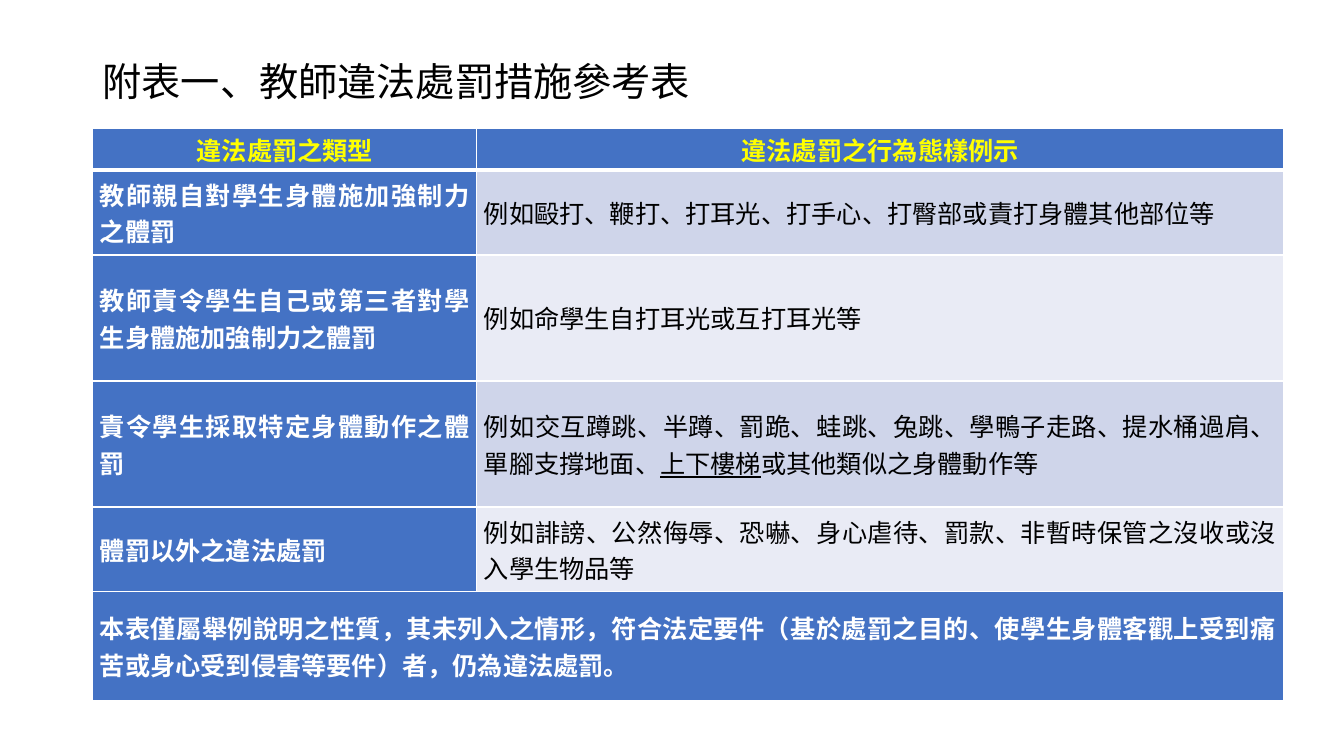
from lxml.etree import SubElement
from pptx import Presentation
from pptx.dml.color import RGBColor
from pptx.enum.text import MSO_ANCHOR as Anchor, PP_ALIGN as Align
from pptx.oxml.ns import qn
from pptx.util import Inches, Pt

TITLE = "附表一、教師違法處罰措施參考表"
HEADINGS = ["違法處罰之類型", "違法處罰之行為態樣例示"]
PUNISHMENTS = [
    ("教師親自對學生身體施加強制力之體罰",
     ["例如毆打、鞭打、打耳光、打手心、打臀部或責打身體其他部位等"]),
    ("教師責令學生自己或第三者對學生身體施加強制力之體罰",
     ["例如命學生自打耳光或互打耳光等"]),
    ("責令學生採取特定身體動作之體罰",
     ["例如交互蹲跳、半蹲、罰跪、蛙跳、兔跳、學鴨子走路、提水桶過肩、單腳支撐地面、",
      "上下樓梯", "或其他類似之身體動作等"]),
    ("體罰以外之違法處罰",
     ["例如誹謗、公然侮辱、恐嚇、身心虐待、罰款、非暫時保管之沒收或沒入學生物品等"]),
]
REMARK = "本表僅屬舉例說明之性質，其未列入之情形，符合法定要件（基於處罰之目的、使學生身體客觀上受到痛苦或身心受到侵害等要件）者，仍為違法處罰。"
UNDERLINED = {"上下樓梯"}

BLUE, WHITE, BLACK, YELLOW = "4472C4", "FFFFFF", "000000", "FFFF00"
BANDS = ["CFD5EA", "E9EBF5"]
LEFT, TOP = 0.92, 1.27
COLUMNS = [3.81, 8]
ROWS = [0.42, 0.84, 1.25, 1.25, 0.84, 1.08]


def rgb(color):
    return RGBColor.from_string(color)


def add_run(paragraph, words, font_name, size, color, bold=False):
    run = paragraph.add_run()
    run.text = words
    font = run.font
    font.name, font.size, font.bold = font_name, Pt(size), bold
    font.color.rgb = rgb(color)
    if words in UNDERLINED:
        font.underline = True


def add_borders(cell, top, bottom):
    properties = cell._tc.get_or_add_tcPr()
    for side, width in (("L", 1), ("R", 1), ("T", top), ("B", bottom)):
        line = SubElement(properties, qn(f"a:ln{side}"), w=str(Pt(width)))
        SubElement(SubElement(line, qn("a:solidFill")), qn("a:srgbClr"), val=WHITE)


def fill_cell(row, column, pieces, fill, color, bold=True, align=Align.JUSTIFY):
    cell = table.cell(row, column)
    add_borders(cell, 3 if row == 1 else 1, 3 if row == 0 else 1)
    cell.fill.solid()
    cell.fill.fore_color.rgb = rgb(fill)
    cell.vertical_anchor = Anchor.MIDDLE
    cell.margin_left = cell.margin_right = Inches(0.07)
    cell.margin_top = cell.margin_bottom = 0
    paragraph = cell.text_frame.paragraphs[0]
    paragraph.alignment = align
    for piece in pieces:
        add_run(paragraph, piece, "Calibri", 18, color, bold)


deck = Presentation()
deck.slide_width, deck.slide_height = Inches(13.33), Inches(7.5)
slide = deck.slides.add_slide(deck.slide_layouts[6])

title = slide.shapes.add_textbox(
    Inches(LEFT), Inches(0.4), Inches(11.5), Inches(0.87)).text_frame
title.word_wrap = True
title.vertical_anchor = Anchor.MIDDLE
title.paragraphs[0].line_spacing = 0.9
add_run(title.paragraphs[0], TITLE, "Arial", 28, BLACK)

table = slide.shapes.add_table(
    len(ROWS), len(COLUMNS), Inches(LEFT), Inches(TOP),
    Inches(sum(COLUMNS)), Inches(sum(ROWS))).table
for column, width in zip(table.columns, COLUMNS):
    column.width = Inches(width)
for row, height in zip(table.rows, ROWS):
    row.height = Inches(height)

for column, heading in enumerate(HEADINGS):
    fill_cell(0, column, [heading], BLUE, YELLOW, align=Align.CENTER)
for row, (kind, examples) in enumerate(PUNISHMENTS, 1):
    fill_cell(row, 0, [kind], BLUE, WHITE)
    fill_cell(row, 1, examples, BANDS[(row - 1) % 2], BLACK, bold=False)

last = len(ROWS) - 1
table.cell(last, 0).merge(table.cell(last, 1))
fill_cell(last, 0, [REMARK], BLUE, WHITE)

deck.save("out.pptx")
